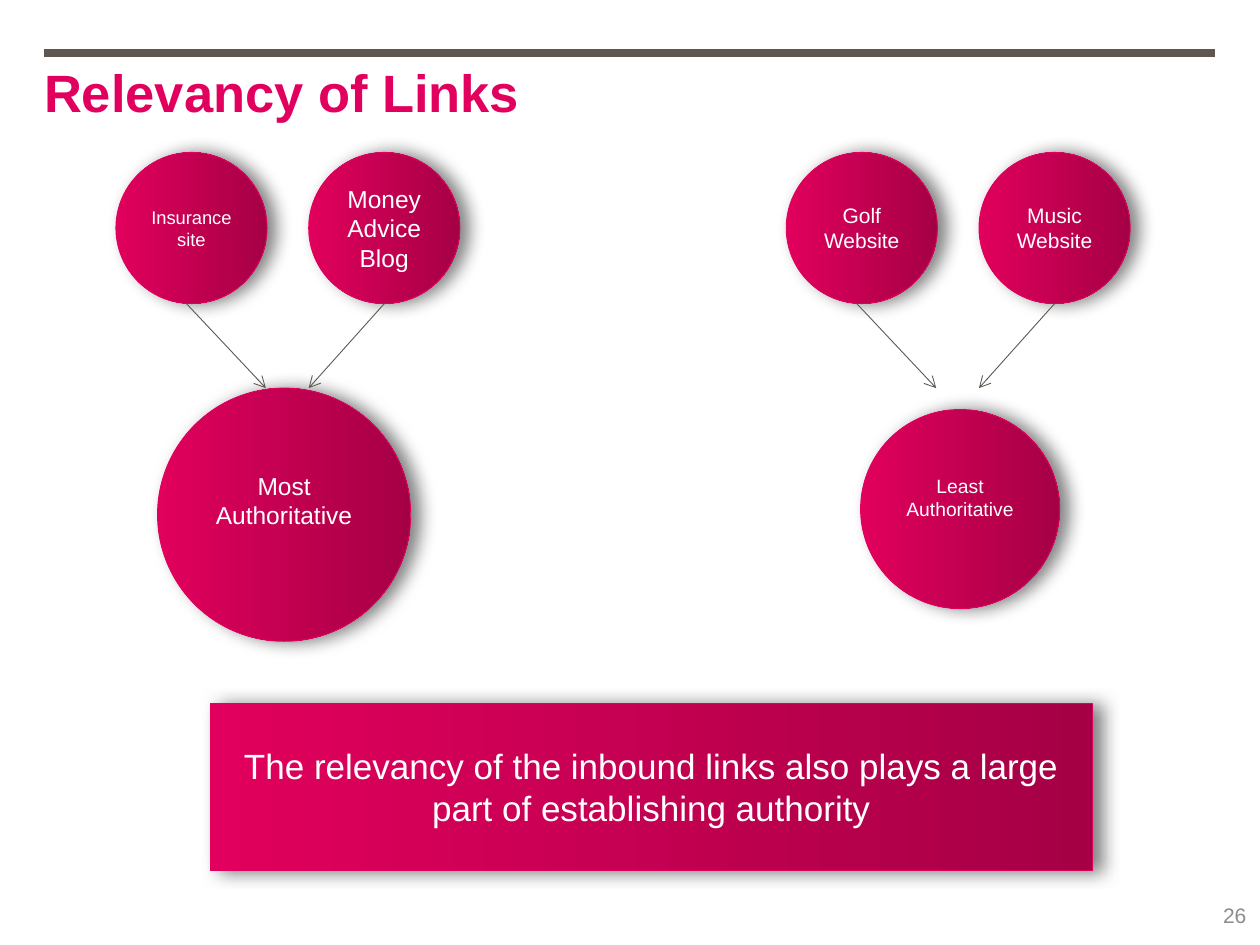
import pptx
import pptx.util
import pptx.dml.color
import pptx.enum.shapes
import pptx.enum.text
import pptx.oxml
import pptx.oxml.ns

Inches, Pt = pptx.util.Inches, pptx.util.Pt
RGBColor = pptx.dml.color.RGBColor
MSO_SHAPE = pptx.enum.shapes.MSO_SHAPE
MSO_ANCHOR = pptx.enum.text.MSO_ANCHOR
PP_ALIGN = pptx.enum.text.PP_ALIGN

PINK = RGBColor(0xE1, 0x00, 0x5D)
DARK_PINK = RGBColor(0xA6, 0x00, 0x45)
BROWN = RGBColor(0x5F, 0x57, 0x4F)
GREY = RGBColor(0x8C, 0x8C, 0x8C)
WHITE = RGBColor(0xFF, 0xFF, 0xFF)
FONT = "Arial"

# Content: each group has two linking sites and one target (text, size)
TITLE = "Relevancy of Links"
MESSAGE = ("The relevancy of the inbound links also plays a large "
           "part of establishing authority")
PAGE_NUMBER = "26"
GROUPS = [
    {"sites": [("Insurance site", 10.5), ("Money Advice Blog", 14)],
     "target": ("Most Authoritative", 14), "target_place": (1.25, 3.08, 2.01)},
    {"sites": [("Golf Website", 12), ("Music Website", 12)],
     "target": ("Least Authoritative", 11), "target_place": (6.83, 3.25, 1.58)},
]

# Layout in inches, measured in the first group
GROUP_STEP = 5.32
SITE_LEFTS, SITE_TOP, SITE_SIZE = (0.92, 2.45), 1.21, 1.2
ARROWS_X = [(1.48, 2.11), (3.05, 2.45)]
ARROW_TOP, ARROW_BOTTOM = SITE_TOP + SITE_SIZE, 3.08

DRAWING_NS = pptx.oxml.ns.nsdecls("a")
SHADOW = (f'<a:effectLst {DRAWING_NS}><a:outerShdw blurRad="{Pt(10)}" dist="{Pt(5)}" '
          'dir="0" algn="ctr" rotWithShape="0"><a:srgbClr val="000000">'
          '<a:alpha val="50000"/></a:srgbClr></a:outerShdw></a:effectLst>')
NO_EFFECT = f"<a:effectLst {DRAWING_NS}/>"
ARROWHEAD = f'<a:tailEnd {DRAWING_NS} type="arrow"/>'


def write(shape, text, size, color, alignment, bold=False):
    frame = shape.text_frame
    frame.word_wrap = True
    frame.text = text
    paragraph = frame.paragraphs[0]
    paragraph.alignment = alignment
    font = paragraph.runs[0].font
    font.name, font.size, font.bold = FONT, Pt(size), bold
    font.color.rgb = color
    return paragraph


def add_text(slide, place, text, size, color, alignment, anchor, bold=False):
    box = slide.shapes.add_textbox(*map(Inches, place))
    frame = box.text_frame
    frame.margin_left = frame.margin_right = 0
    frame.margin_top = frame.margin_bottom = 0
    frame.vertical_anchor = anchor
    return write(box, text, size, color, alignment, bold)


def add_gradient_shape(slide, kind, place, text, size, lift=0):
    shape = slide.shapes.add_shape(kind, *map(Inches, place))
    shape.fill.gradient()
    shape.fill.gradient_angle = 0
    for stop, color, position in zip(shape.fill.gradient_stops, (PINK, DARK_PINK), (0, 1)):
        stop.color.rgb = color
        stop.position = position
    shape.line.color.rgb = PINK
    shape.line.width = Pt(0.5)
    shape._element.spPr.append(pptx.oxml.parse_xml(SHADOW))
    shape.text_frame.vertical_anchor = MSO_ANCHOR.MIDDLE
    shape.text_frame.margin_bottom = Inches(0.05) + Pt(lift)
    write(shape, text, size, WHITE, PP_ALIGN.CENTER)


def add_line(slide, start, end, width, arrow=False):
    line = slide.shapes.add_connector(
        pptx.enum.shapes.MSO_CONNECTOR.STRAIGHT, *map(Inches, start + end))
    line.line.color.rgb = BROWN
    line.line.width = Pt(width)
    if arrow:
        line.line._get_or_add_ln().append(pptx.oxml.parse_xml(ARROWHEAD))
    line._element.spPr.append(pptx.oxml.parse_xml(NO_EFFECT))


def main():
    presentation = pptx.Presentation()
    presentation.slide_width, presentation.slide_height = Inches(10), Inches(7.5)
    slide = presentation.slides.add_slide(presentation.slide_layouts[6])

    # Heading
    add_line(slide, (0.35, 0.42), (9.64, 0.42), 4.5)
    title = add_text(slide, (0.35, 0.43, 5.91, 1.11), TITLE, 30, PINK,
                     PP_ALIGN.LEFT, MSO_ANCHOR.TOP, bold=True)
    title.line_spacing = 1.1

    # Sites, arrows and target of each group
    for index, group in enumerate(GROUPS):
        offset = index * GROUP_STEP
        left, top, diameter = group["target_place"]
        text, size = group["target"]
        # The target's text sits half a line above the centre
        add_gradient_shape(slide, MSO_SHAPE.OVAL, (left, top, diameter, diameter),
                           text, size, lift=size * 1.17)
        for (text, size), left in zip(group["sites"], SITE_LEFTS):
            add_gradient_shape(slide, MSO_SHAPE.OVAL,
                               (left + offset, SITE_TOP, SITE_SIZE, SITE_SIZE), text, size)
        for start_x, end_x in ARROWS_X:
            add_line(slide, (start_x + offset, ARROW_TOP), (end_x + offset, ARROW_BOTTOM),
                     0.5, arrow=True)

    # Message and page number
    add_gradient_shape(slide, MSO_SHAPE.RECTANGLE, (1.67, 5.58, 7, 1.33), MESSAGE, 20)
    add_text(slide, (9.66, 7.11, 0.28, 0.3), PAGE_NUMBER, 12, GREY,
             PP_ALIGN.CENTER, MSO_ANCHOR.MIDDLE)

    presentation.save("out.pptx")


if __name__ == "__main__":
    main()
